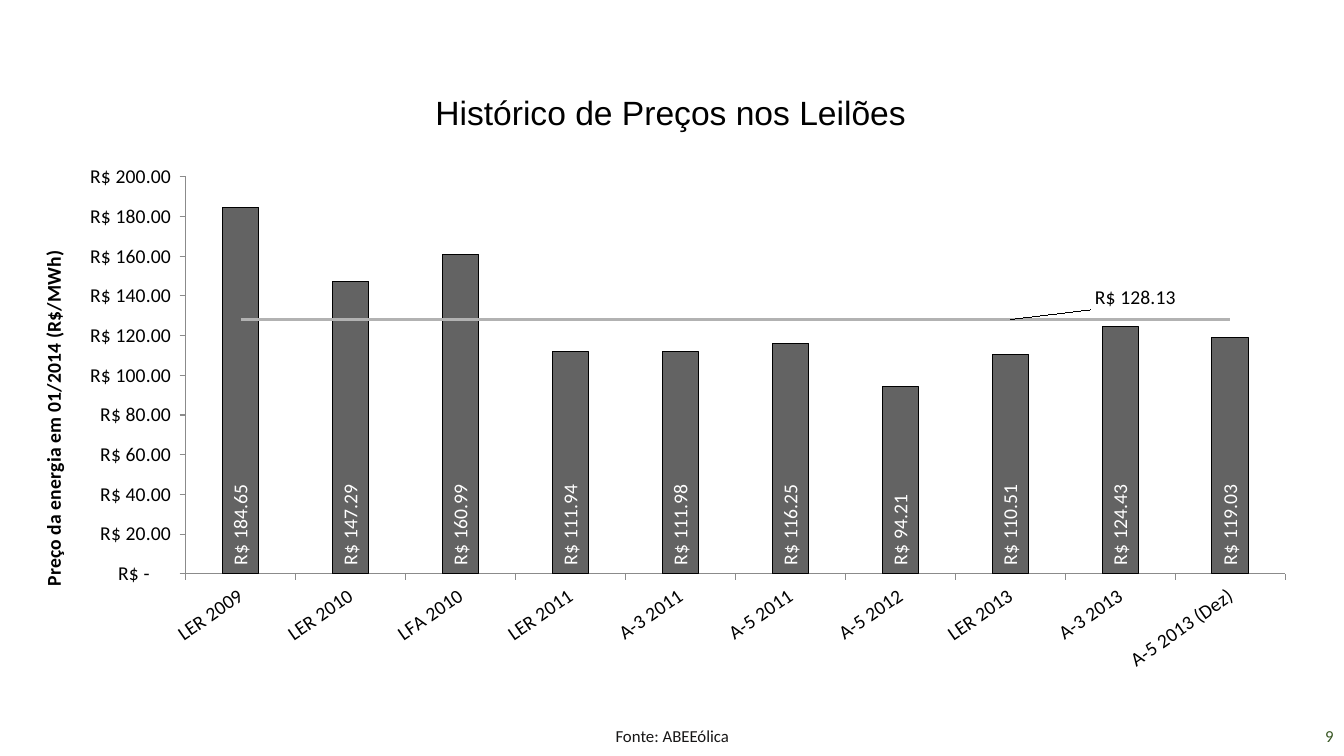
from lxml.etree import SubElement, fromstring
from pptx import Presentation
from pptx.chart.data import CategoryChartData
from pptx.dml.color import RGBColor
from pptx.enum.chart import XL_CHART_TYPE, XL_LABEL_POSITION, XL_MARKER_STYLE, XL_TICK_MARK
from pptx.enum.text import MSO_ANCHOR, PP_ALIGN
from pptx.oxml.ns import qn
from pptx.util import Cm, Pt

COLORS = {"black": "000000", "white": "FFFFFF", "bar": "636363", "average": "B2B2B2",
          "axis": "8B8B8B", "source": "181717", "number": "385723"}
AUCTIONS = [("LER 2009", 184.65), ("LER 2010", 147.29), ("LFA 2010", 160.99),
            ("LER 2011", 111.94), ("A-3 2011", 111.98), ("A-5 2011", 116.25),
            ("A-5 2012", 94.21), ("LER 2013", 110.51), ("A-3 2013", 124.43),
            ("A-5 2013 (Dez)", 119.03)]
AVERAGE = 128.13
LABELLED_POINT = 7
AXIS_TITLE = "Preço da energia em 01/2014 (R$/MWh)"
REAIS = (r'_-[$R$-416]\ * #,##0.00_-;\-[$R$-416]\ * #,##0.00_-;'
         r'_-[$R$-416]\ * "-"??_-;_-@_-')
# text, (left, top, width, height) in cm, alignment, font, size, colour
TEXTS = [
    ("Histórico de Preços nos Leilões", (0.91, 2.11, 31.98, 1.45),
     PP_ALIGN.CENTER, "Arial", 24, "black"),
    ("Fonte: ABEEólica", (11.23, 18.03, 11.43, 1.02), PP_ALIGN.CENTER, "Calibri", 12, "source"),
    ("9", (26.24, 18.03, 7.62, 1.02), PP_ALIGN.RIGHT, "Calibri", 12, "number"),
]
CHART_BOX = (0.91, 3.4, 31.93, 13.74)
PLOT_LAYOUT = {"x": 0.118, "y": 0.077, "w": 0.868, "h": 0.728}
LABEL_SHIFT = {"x": 0.06, "y": -0.04}


def rgb(name):
    return RGBColor.from_string(COLORS[name])


def style_font(font, name, size, color, bold=False):
    font.name, font.size, font.bold = name, Pt(size), bold
    font.color.rgb = rgb(color)


def add_text(slide, text, box, align, font, size, color):
    tf = slide.shapes.add_textbox(*map(Cm, box)).text_frame
    tf.word_wrap, tf.vertical_anchor = True, MSO_ANCHOR.MIDDLE
    p = tf.paragraphs[0]
    p.text, p.alignment = text, align
    style_font(p.font, font, size, color)


def manual_layout(parts, inner=False):
    """Return a c:layout element holding the given fractions of the chart."""
    layout = fromstring(f'<c:layout xmlns:c="{qn("c:x")[1:-2]}"/>')
    manual = SubElement(layout, qn("c:manualLayout"))
    if inner:
        parts = {"layoutTarget": "inner", "xMode": "edge", "yMode": "edge", **parts}
    for tag, value in parts.items():
        SubElement(manual, qn(f"c:{tag}")).set("val", str(value))
    return layout


def rotate_text(element, degrees):
    body = element.find(".//" + qn("a:bodyPr"))
    body.set("rot", str(degrees * 60000))
    body.set("vert", "horz")


def move_to_line_plot(chart):
    """Turn the second bar series into a line on the same axes."""
    bar = chart.plots[0]._element
    ser = bar.findall(qn("c:ser"))[1]
    for invert in ser.findall(qn("c:invertIfNegative")):
        ser.remove(invert)
    line = bar.makeelement(qn("c:lineChart"))
    bar.addnext(line)
    SubElement(line, qn("c:grouping")).set("val", "standard")
    SubElement(line, qn("c:varyColors")).set("val", "0")
    line.append(ser)
    SubElement(line, qn("c:marker")).set("val", "1")
    for axis in bar.findall(qn("c:axId")):
        SubElement(line, qn("c:axId")).set("val", axis.get("val"))


def style_axes(chart):
    for axis in (chart.category_axis, chart.value_axis):
        axis.has_major_gridlines = False
        axis.major_tick_mark, axis.minor_tick_mark = XL_TICK_MARK.OUTSIDE, XL_TICK_MARK.NONE
        axis.format.line.color.rgb = rgb("axis")
        axis.format.line.width = Pt(0.75)
        style_font(axis.tick_labels.font, "Calibri", 14, "black")
    rotate_text(chart.category_axis._element, -35)
    value_axis = chart.value_axis
    value_axis.minimum_scale, value_axis.maximum_scale, value_axis.major_unit = 0, 200, 20
    value_axis.tick_labels.number_format = REAIS
    value_axis.tick_labels.number_format_is_linked = False
    tf = value_axis.axis_title.text_frame
    tf.text = AXIS_TITLE
    style_font(tf.paragraphs[0].font, "Calibri", 14, "black", bold=True)
    rotate_text(value_axis.axis_title._element, -90)


def style_bars(series):
    series.invert_if_negative = False
    series.format.fill.solid()
    series.format.fill.fore_color.rgb = rgb("bar")
    series.format.line.color.rgb = rgb("black")
    series.format.line.width = Pt(0.75)
    labels = series.data_labels
    labels.show_value, labels.position = True, XL_LABEL_POSITION.INSIDE_BASE
    labels.number_format, labels.number_format_is_linked = REAIS, False
    style_font(labels.font, "Calibri", 14, "white")
    rotate_text(labels._element, -90)


def style_average(series):
    series.smooth = False
    series.marker.style = XL_MARKER_STYLE.NONE
    series.format.line.color.rgb = rgb("average")
    series.format.line.width = Pt(2.25)
    labels = series.data_labels
    labels.show_value = False
    labels.number_format, labels.number_format_is_linked = REAIS, False
    label = series.points[LABELLED_POINT].data_label
    style_font(label.font, "Calibri", 14, "black")
    label.position = XL_LABEL_POSITION.RIGHT
    idx = labels._element.find(qn("c:dLbl")).find(qn("c:idx"))
    num_fmt = idx.makeelement(qn("c:numFmt"), {"formatCode": REAIS, "sourceLinked": "0"})
    idx.addnext(num_fmt)
    idx.addnext(manual_layout(LABEL_SHIFT))


def add_price_chart(slide):
    data = CategoryChartData(number_format=REAIS)
    data.categories = [name for name, _ in AUCTIONS]
    data.add_series("Preço", [price for _, price in AUCTIONS])
    data.add_series("Média", [AVERAGE] * len(AUCTIONS))
    chart = slide.shapes.add_chart(
        XL_CHART_TYPE.COLUMN_CLUSTERED, *map(Cm, CHART_BOX), data).chart
    chart.has_legend = chart.has_title = False
    style_font(chart.font, "Calibri", 14, "black")
    chart.plots[0].gap_width, chart.plots[0].vary_by_categories = 200, False
    move_to_line_plot(chart)
    style_axes(chart)
    bars, average = chart.plots
    style_bars(bars.series[0])
    style_average(average.series[0])
    plot_area = bars._element.getparent()
    for old in plot_area.findall(qn("c:layout")):
        plot_area.remove(old)
    plot_area.insert(0, manual_layout(PLOT_LAYOUT, inner=True))


def main():
    prs = Presentation()
    prs.slide_width, prs.slide_height = Cm(33.87), Cm(19.05)
    slide = prs.slides.add_slide(prs.slide_layouts[6])
    add_price_chart(slide)
    for text in TEXTS:
        add_text(slide, *text)
    prs.save("out.pptx")


if __name__ == "__main__":
    main()
